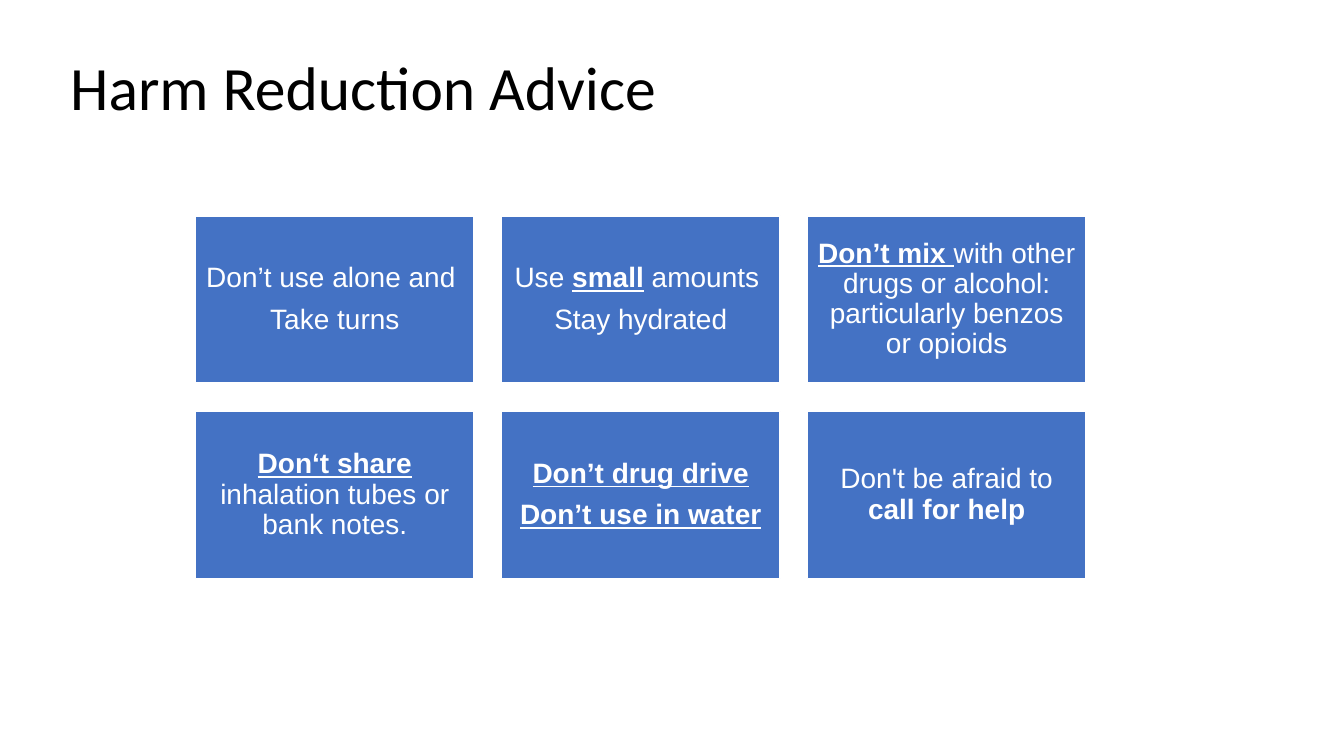
from pptx import Presentation
from pptx.dml.color import RGBColor
from pptx.enum.shapes import MSO_SHAPE as Shape
from pptx.enum.text import MSO_ANCHOR as Anchor, PP_ALIGN as Align
from pptx.util import Cm, Pt

BLACK = RGBColor(0x00, 0x00, 0x00)
WHITE = RGBColor(0xFF, 0xFF, 0xFF)
BLUE = RGBColor(0x44, 0x72, 0xC4)

# Card grid, in centimetres
COLUMNS = 3
LEFT, TOP = 4.93, 5.44
WIDTH, HEIGHT = 7.02, 4.21
STEP_X, STEP_Y = 7.71, 4.93

# Run styles: (bold, underline)
PLAIN = (False, False)
BOLD = (True, False)
STRONG = (True, True)

# Each card is a list of paragraphs, each paragraph a list of runs
CARDS = [
    [[("Don’t use alone and ", PLAIN)], [("Take turns", PLAIN)]],
    [[("Use ", PLAIN), ("small", STRONG), (" amounts ", PLAIN)],
     [("Stay hydrated", PLAIN)]],
    [[("Don’t mix ", STRONG),
      ("with other drugs or alcohol: particularly benzos or opioids", PLAIN)]],
    [[("Don‘t share ", STRONG), ("inhalation tubes or bank notes.", PLAIN)]],
    [[("Don’t drug drive", STRONG)], [("Don’t use in water", STRONG)]],
    [[("Don't be afraid to ", PLAIN), ("call for help", BOLD)]],
]


def add_run(paragraph, text, font_name, size, color, style=PLAIN):
    run = paragraph.add_run()
    run.text = text
    font = run.font
    font.name, font.size = font_name, Pt(size)
    font.color.rgb = color
    font.bold, font.underline = style


def add_title(slide, text):
    box = slide.shapes.add_textbox(Cm(1.52), Cm(0.43), Cm(29.21), Cm(3.68))
    frame = box.text_frame
    frame.word_wrap = True
    frame.vertical_anchor = Anchor.MIDDLE
    paragraph = frame.paragraphs[0]
    paragraph.line_spacing = 0.9
    add_run(paragraph, text, "Calibri", 44, BLACK)


def add_card(slide, left, top, paragraphs):
    card = slide.shapes.add_shape(
        Shape.RECTANGLE, Cm(left), Cm(top), Cm(WIDTH), Cm(HEIGHT))
    card.shadow.inherit = False
    card.fill.solid()
    card.fill.fore_color.rgb = BLUE
    card.line.color.rgb = WHITE
    card.line.width = Pt(1)

    frame = card.text_frame
    frame.word_wrap = True
    frame.vertical_anchor = Anchor.MIDDLE
    frame.margin_left = frame.margin_right = Cm(0.2)
    frame.margin_top = frame.margin_bottom = Cm(0.2)
    for index, runs in enumerate(paragraphs):
        paragraph = frame.add_paragraph() if index else frame.paragraphs[0]
        paragraph.alignment = Align.CENTER
        paragraph.line_spacing = 0.9
        paragraph.space_after = Pt(8)
        for text, style in runs:
            add_run(paragraph, text, "Arial", 20, WHITE, style)


def main():
    presentation = Presentation()
    presentation.slide_width = Cm(33.87)
    presentation.slide_height = Cm(19.05)
    slide = presentation.slides.add_slide(presentation.slide_layouts[6])

    # Heading
    add_title(slide, "Harm Reduction Advice")

    # Advice cards, row by row
    for index, paragraphs in enumerate(CARDS):
        row, column = divmod(index, COLUMNS)
        add_card(slide, LEFT + column * STEP_X, TOP + row * STEP_Y, paragraphs)

    presentation.save("out.pptx")


if __name__ == "__main__":
    main()
